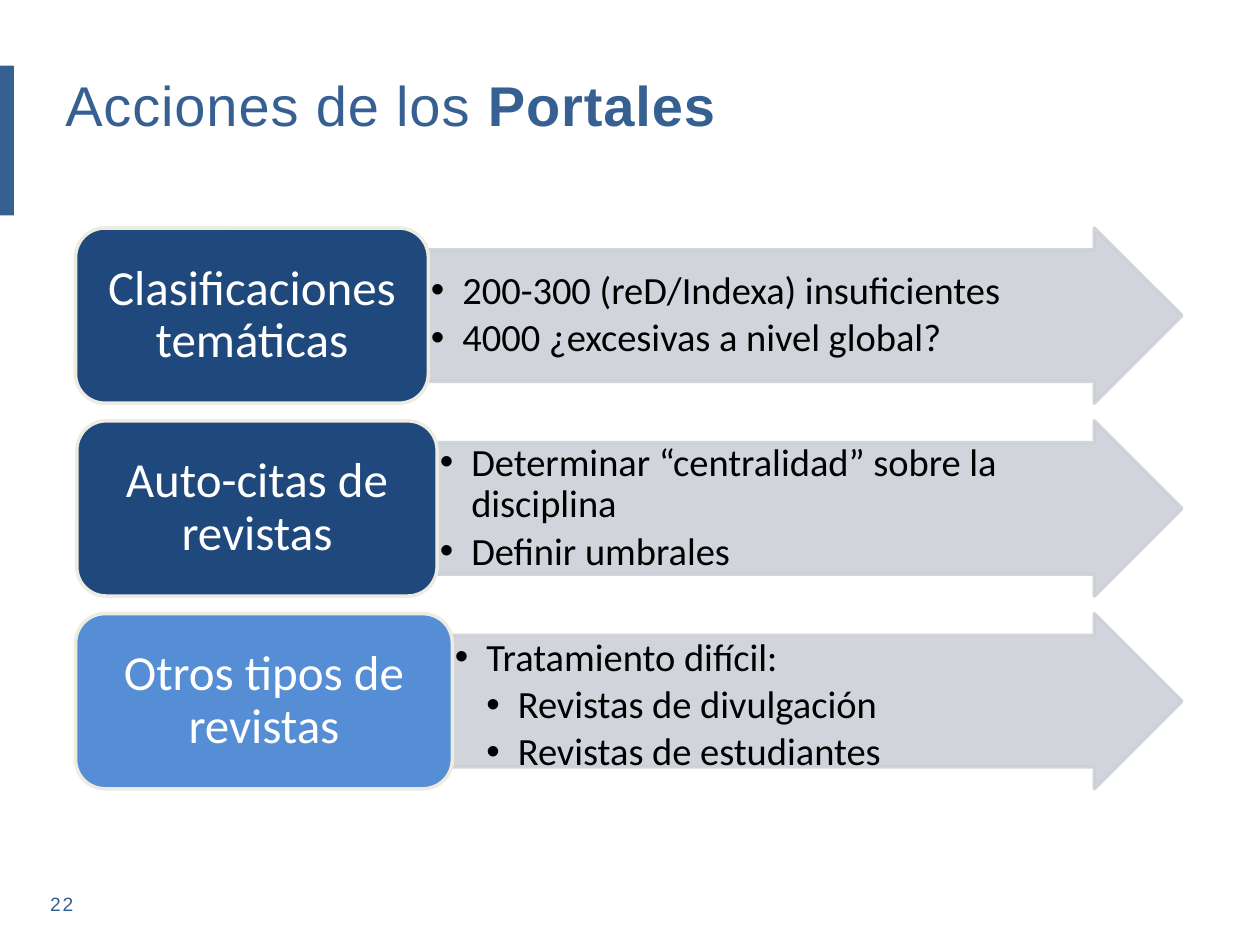
import pptx
import pptx.util
import pptx.dml.color
import pptx.enum.shapes
import pptx.enum.text
import pptx.oxml.ns
from lxml import etree

Inches = pptx.util.Inches
Pt = pptx.util.Pt
SHAPES = pptx.enum.shapes.MSO_SHAPE
ANCHOR = pptx.enum.text.MSO_ANCHOR
qn = pptx.oxml.ns.qn

TITLE = [("Acciones de los ", False), ("Portales", True)]
PAGE_NUMBER = [("22", False)]
ACTIONS = [
    dict(topic="Clasificaciones temáticas", left=0.6, split=3.4, fill="1F497D", anchor=ANCHOR.MIDDLE,
         points=[(1, "200-300 (reD/Indexa) insuficientes"), (1, "4000 ¿excesivas a nivel global?")]),
    dict(topic="Auto-citas de revistas", left=0.61, split=3.47, fill="1F497D", anchor=ANCHOR.MIDDLE,
         points=[(1, "Determinar “centralidad” sobre la disciplina"), (1, "Definir umbrales")]),
    dict(topic="Otros tipos de revistas", left=0.6, split=3.59, fill="558ED5", anchor=ANCHOR.TOP,
         points=[(1, "Tratamiento difícil:"), (2, "Revistas de divulgación"),
                 (2, "Revistas de estudiantes")]),
]
TOP, PITCH, HEIGHT, RIGHT = 1.81, 1.53, 1.39, 9.38
BLUE, ARROW_GREY, CREAM = "376092", "CDD0D7", "EEECE1"
INDENT = 0.25


def color(value):
    return pptx.dml.color.RGBColor.from_string(value)


def add_run(paragraph, text, size, font, ink, bold=False, spacing=0):
    run = paragraph.add_run()
    run.text = text
    run.font.size = Pt(size)
    run.font.name = font
    run.font.bold = bold
    run.font.color.rgb = color(ink)
    if spacing:
        run.font._element.set("spc", str(int(spacing * 100)))


def add_label(slide, left, top, width, height, runs, size, spacing):
    frame = slide.shapes.add_textbox(Inches(left), Inches(top), Inches(width), Inches(height)).text_frame
    frame.word_wrap = True
    for text, bold in runs:
        add_run(frame.paragraphs[0], text, size, "Arial", BLUE, bold, spacing)


def add_block(slide, kind, left, top, width, height, fill, line=None):
    block = slide.shapes.add_shape(kind, Inches(left), Inches(top), Inches(width), Inches(height))
    block.shadow.inherit = False
    block.fill.solid()
    block.fill.fore_color.rgb = color(fill)
    if line:
        block.line.color.rgb = color(line)
        block.line.width = Pt(2)
    else:
        block.line.fill.background()
    return block


def set_frame(block, anchor, left, top, right, bottom):
    frame = block.text_frame
    frame.word_wrap = True
    frame.vertical_anchor = anchor
    frame.margin_left, frame.margin_top = Inches(left), Inches(top)
    frame.margin_right, frame.margin_bottom = Inches(right), Inches(bottom)
    return frame


def set_spacing(paragraph, align, after):
    paragraph.alignment = align
    paragraph.line_spacing = 0.9
    paragraph.space_after = Pt(after)


def add_points(frame, points):
    for index, (level, text) in enumerate(points):
        paragraph = frame.add_paragraph() if index else frame.paragraphs[0]
        paragraph.level = level
        set_spacing(paragraph, pptx.enum.text.PP_ALIGN.LEFT, 3.3)
        properties = paragraph._p.get_or_add_pPr()
        properties.set("marL", str(Inches(INDENT * level)))
        properties.set("indent", str(-Inches(INDENT)))
        etree.SubElement(properties, qn("a:buFont"), typeface="Arial")
        etree.SubElement(properties, qn("a:buChar"), char="•")
        add_run(paragraph, text, 22, "Calibri", "000000")


def add_action(slide, top, action):
    left, split = action["left"], action["split"]
    arrow = add_block(slide, SHAPES.RIGHT_ARROW, split, top, RIGHT - split, HEIGHT, ARROW_GREY, ARROW_GREY)
    arrow.adjustments[0], arrow.adjustments[1] = 0.75, 0.5
    for tint in arrow._element.spPr.iter(qn("a:srgbClr")):
        etree.SubElement(tint, qn("a:alpha"), val="90000")
    add_points(set_frame(arrow, action["anchor"], 0.02, 0.02, 0.37, 0.02), action["points"])

    box = add_block(slide, SHAPES.ROUNDED_RECTANGLE, left, top, split - left, HEIGHT, action["fill"], CREAM)
    heading = set_frame(box, ANCHOR.MIDDLE, 0.12, 0.06, 0.12, 0.06).paragraphs[0]
    set_spacing(heading, pptx.enum.text.PP_ALIGN.CENTER, 9.8)
    add_run(heading, action["topic"], 28, "Calibri", "FFFFFF")


def main():
    deck = pptx.Presentation()
    deck.slide_width, deck.slide_height = Inches(10), Inches(7.5)
    slide = deck.slides.add_slide(deck.slide_layouts[6])
    add_label(slide, 0.3, 7.03, 9.25, 0.29, PAGE_NUMBER, 11, 1)
    add_block(slide, SHAPES.RECTANGLE, 0, 0.52, 0.11, 1.19, BLUE)
    for row, action in enumerate(ACTIONS):
        add_action(slide, TOP + row * PITCH, action)
    add_label(slide, 0.42, 0.51, 9.16, 0.64, TITLE, 32, 0.5)
    deck.save("out.pptx")


if __name__ == "__main__":
    main()
